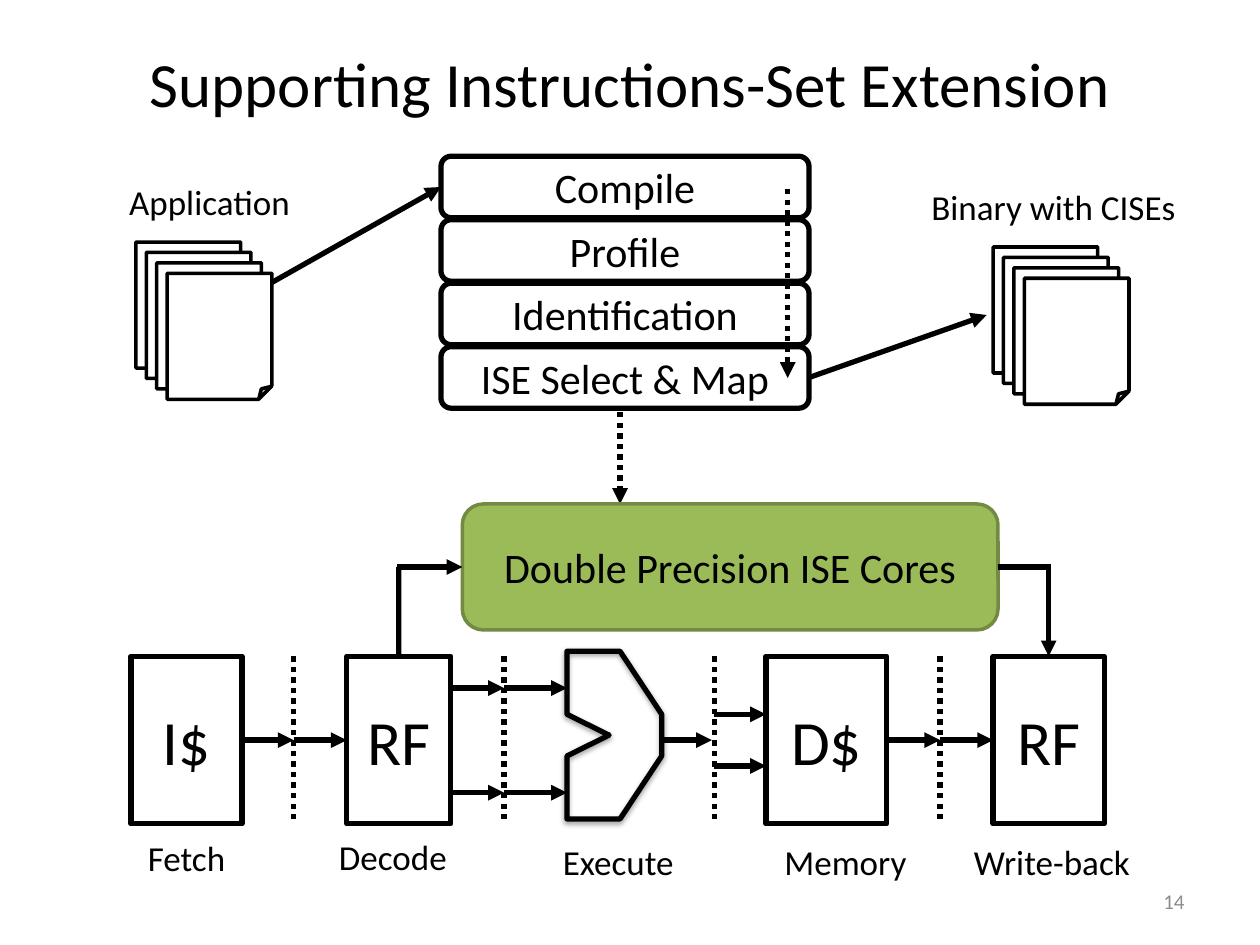
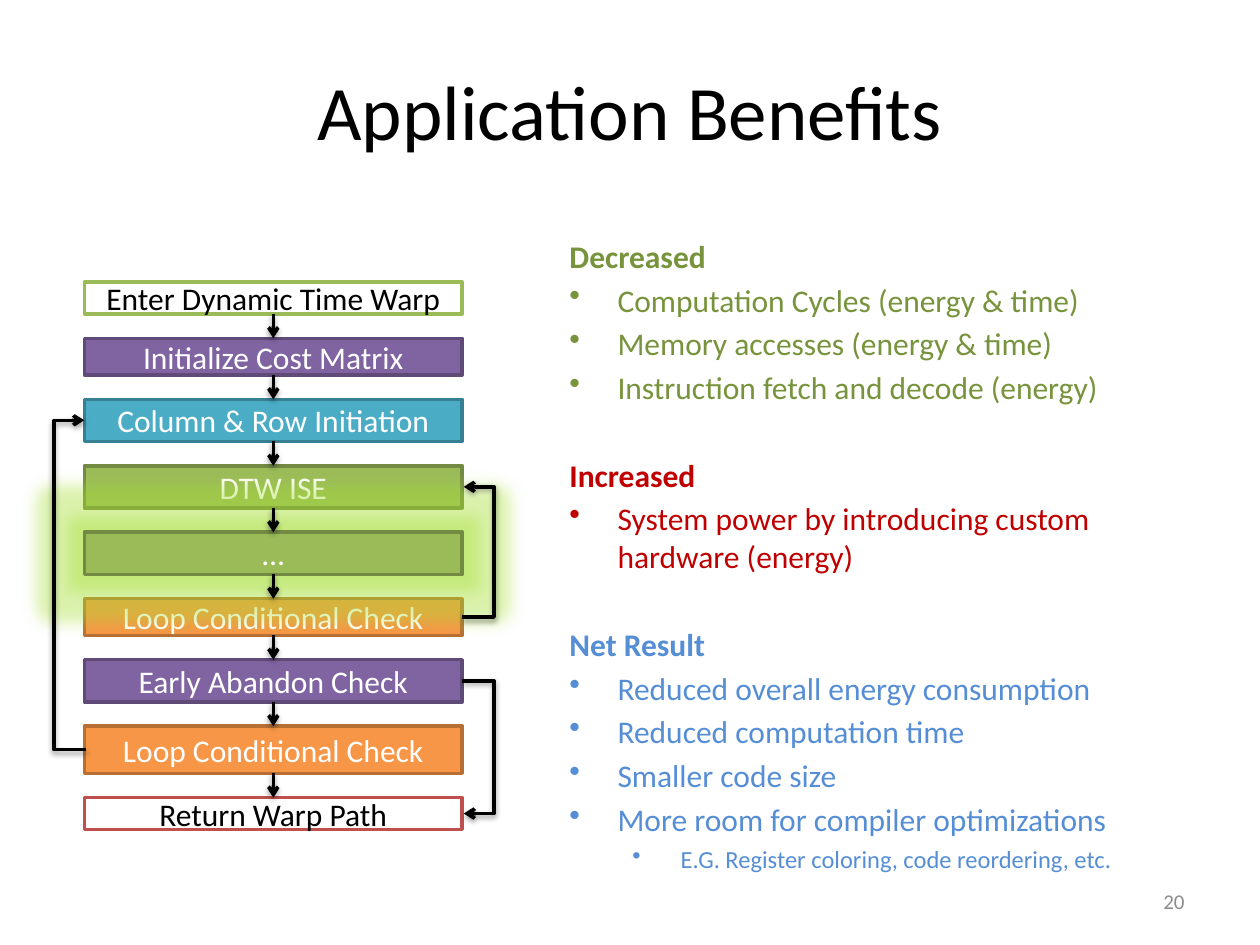
from dataclasses import dataclass
from itertools import accumulate, pairwise

from pptx import Presentation
from pptx.dml.color import RGBColor as RGB
from pptx.enum.dml import MSO_LINE
from pptx.enum.shapes import MSO_CONNECTOR as CXN, MSO_SHAPE as SHAPE
from pptx.enum.text import MSO_ANCHOR as ANCHOR, PP_ALIGN as ALIGN
from pptx.oxml import parse_xml
from pptx.oxml.ns import nsdecls, qn
from pptx.util import Cm, Pt


@dataclass(frozen=True)
class Theme:
    """Colours, type sizes and line widths of the deck."""
    font: str = "Calibri"
    black: str = "000000"
    white: str = "FFFFFF"
    grey: str = "8C8C8C"
    green: str = "9BBB59"
    green_edge: str = "738A42"
    green_text: str = "77933C"
    glow: str = "A6DF34"
    purple: str = "8064A2"
    purple_edge: str = "5F4A78"
    teal: str = "4BACC6"
    teal_edge: str = "377F92"
    orange: str = "F79646"
    orange_edge: str = "B76F34"
    red: str = "C0504D"
    red_text: str = "C00000"
    blue_text: str = "558ED5"
    title: int = 44
    long_title: int = 36
    stage: int = 36
    tool: int = 24
    caption: int = 20
    body: int = 18
    detail: int = 14
    number: int = 12
    thick: int = 3
    thin: int = 2


def put(obj, fmt):
    """Set each attribute named in a dict of format values."""
    for name, value in fmt.items():
        setattr(obj, name, value)


def element(tag, attrs="", inner=""):
    """Return a DrawingML element."""
    return parse_xml(f"<a:{tag} {nsdecls('a')} {attrs}>{inner}</a:{tag}>")


def colored(tag, attrs, color, alpha):
    """Return an effect element with a transparent colour."""
    return element(tag, attrs, f'<a:srgbClr val="{color}"><a:alpha val="{alpha}000"/></a:srgbClr>')


def adjust(sp, name, value):
    """Set one adjustment of a preset geometry, in thousandths of a percent."""
    guides = sp._element.spPr.find(qn("a:prstGeom")).get_or_add_avLst()
    guides.append(element("gd", f'name="{name}" fmla="val {value}"'))


class Deck:
    """Holds the style and the current slide and draws each kind of element."""

    def __init__(self, theme):
        """Start a 4:3 presentation."""
        self.t = theme
        self.prs = Presentation()
        put(self.prs, {"slide_width": Cm(25.4), "slide_height": Cm(19.05)})

    def slide(self, title, number, size, top, height):
        """Add a slide with its title and page number."""
        self.s = self.prs.slides.add_slide(self.prs.slide_layouts[6])
        self.text(title, (1.27, top, 22.86, height), size, anchor=ANCHOR.MIDDLE)
        self.text(str(number), (18.21, 17.65, 5.92, 1.02), self.t.number,
                  self.t.grey, ALIGN.RIGHT, ANCHOR.MIDDLE)

    def run(self, p, text, size, color, bold=False):
        """Add a styled run to a paragraph."""
        r = p.add_run()
        r.text = text
        put(r.font, {"name": self.t.font, "size": Pt(size), "bold": bold})
        r.font.color.rgb = RGB.from_string(color)

    def frame(self, sp, text, size, color, align, anchor):
        """Fill the text frame of a shape with one paragraph."""
        tf = sp.text_frame
        put(tf, {"word_wrap": True, "vertical_anchor": anchor})
        p = tf.paragraphs[0]
        p.alignment = align
        self.run(p, text, size, color)

    def text(self, text, box, size, color=None, align=ALIGN.CENTER, anchor=ANCHOR.TOP):
        """Add a one-paragraph text box."""
        sp = self.s.shapes.add_textbox(*map(Cm, box))
        self.frame(sp, text, size, color or self.t.black, align, anchor)

    def paint(self, sp, fill, edge, width):
        """Set the fill and outline of a shape and drop its shadow."""
        sp.shadow.inherit = False
        if fill:
            sp.fill.solid()
            sp.fill.fore_color.rgb = RGB.from_string(fill)
        else:
            sp.fill.background()
        sp.line.color.rgb = RGB.from_string(edge)
        sp.line.width = Pt(width)

    def shape(self, kind, box, text="", size=18, color=None, fill=None, edge=None, width=3):
        """Add a preset shape, with centred text if any."""
        sp = self.s.shapes.add_shape(kind, *map(Cm, box))
        self.paint(sp, fill, edge or self.t.black, width)
        if text:
            self.frame(sp, text, size, color or self.t.black, ALIGN.CENTER, ANCHOR.MIDDLE)
        return sp

    def outline(self, points):
        """Add a closed unfilled outline with a soft shadow."""
        first, *rest = [(Cm(x), Cm(y)) for x, y in points]
        fb = self.s.shapes.build_freeform(*first)
        fb.add_line_segments(rest, close=True)
        sp = fb.convert_to_shape()
        self.paint(sp, None, self.t.black, self.t.thick)
        self.shade(sp)

    def effects(self, sp):
        """Return the effect list of a shape or connector."""
        props = sp._element.spPr
        if props.find(qn("a:effectLst")) is None:
            props.append(element("effectLst"))
        return props.find(qn("a:effectLst"))

    def shade(self, sp):
        """Give a shape a soft shadow below it."""
        attrs = 'blurRad="40000" dist="20000" dir="5400000" rotWithShape="0"'
        self.effects(sp).append(colored("outerShdw", attrs, self.t.black, 38))

    def glow(self, sp):
        """Surround a shape with a green glow."""
        self.effects(sp).append(colored("glow", 'rad="228600"', self.t.glow, 40))

    def line(self, a, b, width=3, tail="triangle", dotted=False, shadow=False, bend=None):
        """Connect two ends, each a point or a (shape, side) pair."""
        ends = [(0, 0) if hasattr(e[0], "shape_id") else e for e in (a, b)]
        kind = CXN.STRAIGHT if bend is None else CXN.ELBOW
        c = self.s.shapes.add_connector(kind, *(Cm(v) for e in ends for v in e))
        for e, join in ((a, c.begin_connect), (b, c.end_connect)):
            if hasattr(e[0], "shape_id"):
                join(*e)
        c.line.color.rgb = RGB.from_string(self.t.black)
        put(c.line, {"width": Pt(width), "dash_style": MSO_LINE.ROUND_DOT if dotted else None})
        if tail:
            c._element.spPr.find(qn("a:ln")).append(element("tailEnd", f'type="{tail}"'))
        self.effects(c)
        if shadow:
            self.shade(c)
        if bend is not None:
            adjust(c, "adj1", round((bend - a[0]) / (b[0] - a[0]) * 100000))

    def pages(self, left, top):
        """Add a stack of four folded pages."""
        for i in range(4):
            sp = self.shape(SHAPE.FOLDED_CORNER, (left + 0.21 * i, top + 0.21 * i, 2.11, 2.54),
                            fill=self.t.white, width=self.t.thin)
            adjust(sp, "adj", 12500)

    def groups(self, box, groups):
        """Add headed bullet lists, one colour to a group."""
        tf = self.s.shapes.add_textbox(*map(Cm, box)).text_frame
        tf.word_wrap = True
        for n, (color, head, items) in enumerate(groups):
            for i, (text, level) in enumerate([(head, 0), *items]):
                p = tf.paragraphs[0] if n + i == 0 else tf.add_paragraph()
                gap = 28.5 if n and i == 0 else 3.4
                put(p, {"level": level, "space_before": Pt(gap)})
                ppr = p._p.get_or_add_pPr()
                ppr.set("marL", str(int(Cm(0.97 + 1.27 * level))))
                ppr.set("indent", str(-int(Cm(0.97))))
                ppr.append(element("buChar", 'char="•"') if i else element("buNone"))
                self.run(p, text, self.t.detail if level else self.t.body, color, i == 0)


def extension_slide(d):
    """Draw the tool flow above the processor pipeline."""
    t = d.t
    d.slide("Supporting Instructions-Set Extension", 14, t.long_title, 0.76, 1.78)

    names = ("Compile", "Profile", "Identification", "ISE Select & Map")
    tools = [d.shape(SHAPE.ROUNDED_RECTANGLE, (8.89, 3.15 + 1.28 * i, 7.42, 1.24), name, t.tool)
             for i, name in enumerate(names)]
    d.line((5.08, 5.92), (tools[0], 1))
    d.line((tools[-1], 3), (19.89, 6.35))
    d.line((15.88, 3.81), (15.88, 7.62), dotted=True)
    d.line((12.5, 8.31), (12.5, 10.16), dotted=True)
    d.pages(2.74, 4.88)
    d.pages(20.02, 4.98)

    stages = [d.shape(SHAPE.RECTANGLE, (left, 13.23, width, 3.38), name, t.stage)
              for name, left, width in (("I$", 2.64, 2.24), ("RF", 6.99, 2.1),
                                        ("D$", 15.44, 2.44), ("RF", 20.02, 2.24))]
    fetch, decode, memory, write_back = stages
    latches = (5.92, 10.16, 14.4, 18.95)
    for x in latches:
        d.line((x, 13.23), (x, 16.61), tail=None, dotted=True)
    middle = 14.92
    for source, x, target in ((fetch, latches[0], decode), (memory, latches[3], write_back)):
        d.line((source, 3), (x, middle))
        d.line((x, middle), (target, 1))
    for y in (13.87, 15.98):
        for x1, x2 in pairwise((9.09, latches[1], 11.43)):
            d.line((x1, y), (x2, y))
    d.line((13.34, middle), (14.35, middle))
    for y in (14.4, 15.44):
        d.line((latches[2], y), (15.44, y))
    d.outline([(11.43, 13.13), (12.5, 13.13), (13.34, 14.4), (13.34, 15.24), (12.5, 16.51),
               (11.43, 16.51), (11.43, 15.24), (12.28, 14.82), (11.43, 14.4)])

    cores = d.shape(SHAPE.ROUNDED_RECTANGLE, (9.32, 10.16, 10.8, 2.54), "Double Precision ISE Cores",
                    t.tool, fill=t.green, edge=t.green_edge, width=t.thin)
    d.line((decode, 0), (8.04, 11.43), tail=None)
    d.line((8.0, 11.43), (cores, 1))
    d.line((cores, 3), (21.19, 11.43), tail=None)
    d.line((21.14, 11.43), (write_back, 0))

    for name, left, top, width in (("Application", 1.47, 3.51, 5.51),
                                   ("Binary with CISEs", 17.58, 3.61, 7.32),
                                   ("Fetch", 2.64, 16.74, 2.24), ("Decode", 6.55, 16.71, 2.74),
                                   ("Execute", 10.46, 16.81, 4.01), ("Memory", 15.04, 16.81, 4.01),
                                   ("Write-back", 19.35, 16.81, 3.71)):
        d.text(name, (left, top, width, 1.09), t.caption)


def benefits_slide(d):
    """Draw the warp flow chart beside the list of benefits."""
    t = d.t
    d.slide("Application Benefits", 20, t.title, 0.84, 2.74)
    d.groups((11.23, 4.65, 12.95, 13.13), (
        (t.green_text, "Decreased", (("Computation Cycles (energy & time)", 0),
                                     ("Memory accesses (energy & time)", 0),
                                     ("Instruction fetch and decode (energy)", 0))),
        (t.red_text, "Increased", (("System power by introducing custom hardware (energy)", 0),)),
        (t.blue_text, "Net Result", (("Reduced overall energy consumption", 0),
                                     ("Reduced computation time", 0),
                                     ("Smaller code size", 0),
                                     ("More room for compiler optimizations", 0),
                                     ("E.G. Register coloring, code reordering, etc.", 1)))))

    purple, teal = (t.purple, t.purple_edge, t.white), (t.teal, t.teal_edge, t.white)
    green, orange = (t.green, t.green_edge, t.white), (t.orange, t.orange_edge, t.white)
    steps = (("Enter Dynamic Time Warp", 0.64, (t.white, t.green, t.black)),
             ("Initialize Cost Matrix", 0.74, purple),
             ("Column & Row Initiation", 0.85, teal),
             ("DTW ISE", 0.85, green),
             ("…", 0.85, green),
             ("Loop Conditional Check", 0.74, orange),
             ("Early Abandon Check", 0.85, purple),
             ("Loop Conditional Check", 0.95, orange),
             ("Return Warp Path", 0.64, (t.white, t.red, t.black)))
    gap, glowing = 0.49, 4
    tops = list(accumulate((h + gap for _, h, _ in steps), initial=5.69))
    boxes = {}
    for i in sorted(range(len(steps)), key=lambda n: n == glowing):
        name, height, (fill, edge, color) = steps[i]
        boxes[i] = d.shape(SHAPE.RECTANGLE, (1.7, tops[i], 7.62, height), name, t.body,
                           color, fill, edge, t.thin)
    d.glow(boxes[glowing])

    arrow = {"width": t.thin, "tail": "arrow", "shadow": True}
    for i, j in pairwise(range(len(steps))):
        d.line((boxes[i], 2), (boxes[j], 0), **arrow)
    centres = [top + h / 2 for top, (_, h, _) in zip(tops, steps)]
    for i, j, x1, x2, bend in ((7, 2, 1.73, 1.7, 1.09), (5, 3, 9.32, 9.35, 9.96),
                               (6, 8, 9.32, 9.35, 9.96)):
        d.line((x1, centres[i]), (x2, centres[j]), bend=bend, **arrow)


def main():
    """Build and save the two slides."""
    d = Deck(Theme())
    extension_slide(d)
    benefits_slide(d)
    d.prs.save("out.pptx")


if __name__ == "__main__":
    main()
